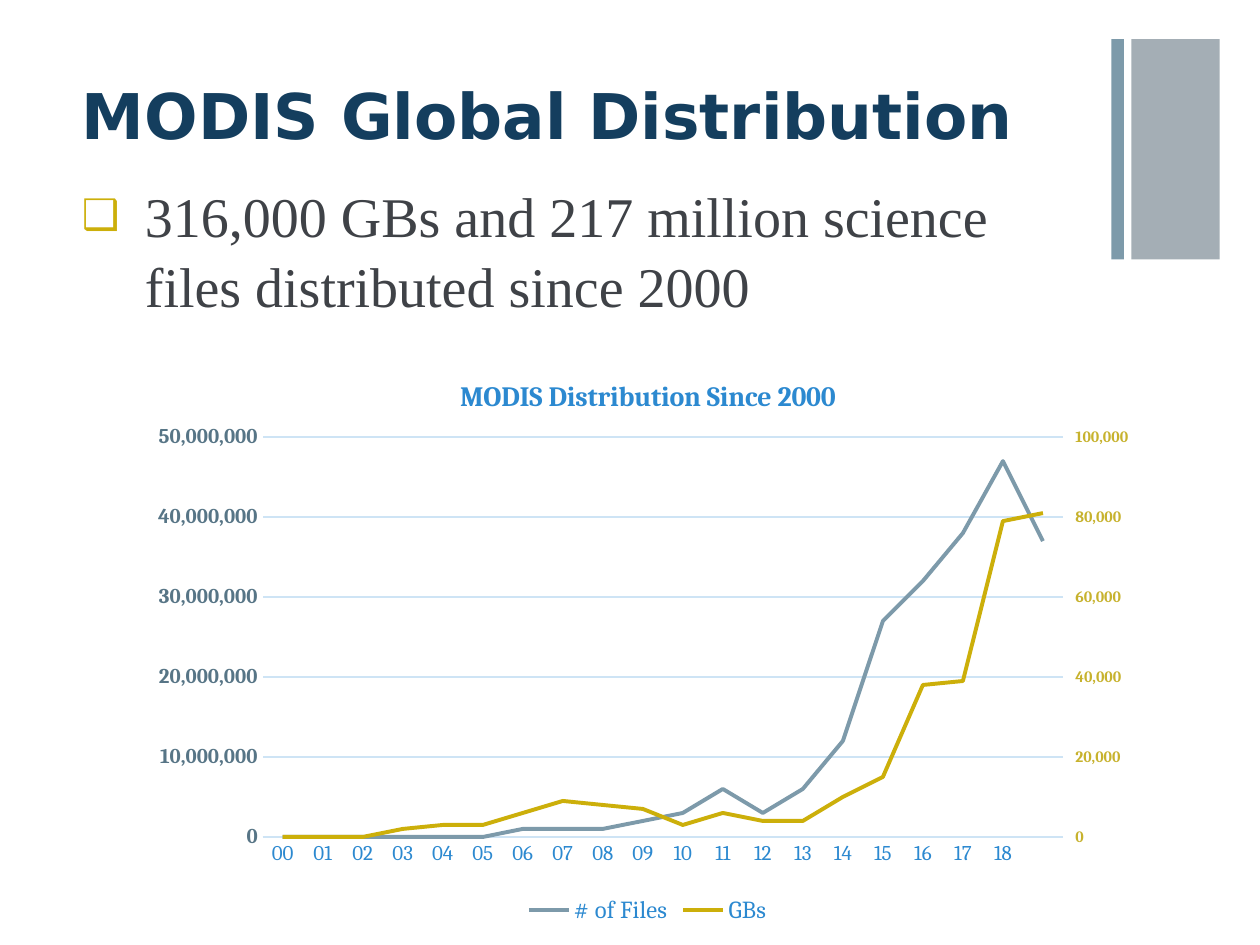
from copy import deepcopy

from lxml import etree
from pptx import Presentation
from pptx.chart.axis import ValueAxis
from pptx.chart.data import CategoryChartData
from pptx.dml.color import RGBColor
from pptx.enum import chart as charts, shapes, text
from pptx.oxml import ns
from pptx.util import Inches, Pt

STEEL, GOLD, BLUE, GRID = "7D9AAA", "CCAF0A", "2C89D0", "CEE4F5"
YEARS = [f"{year:02d}" for year in range(19)]
# The last point has no year label
FILES = [millions * 1_000_000 for millions in
         (0, 0, 0, 0, 0, 0, 1, 1, 1, 2, 3, 6, 3, 6, 12, 27, 32, 38, 47, 37)]
GIGABYTES = [thousands * 1000 for thousands in
             (0, 0, 0, 2, 3, 3, 6, 9, 8, 7, 3, 6, 4, 4, 10, 15, 38, 39, 79, 81)]


def rgb(value):
    return RGBColor.from_string(value)


def style_font(font, name, size, color, bold=False):
    font.name, font.size, font.bold = name, Pt(size), bold
    font.color.rgb = rgb(color)


def write(frame, words, **font):
    frame.text = words
    paragraph = frame.paragraphs[0]
    style_font(paragraph.runs[0].font, **font)
    return paragraph


def place(shape, box):
    shape.left, shape.top, shape.width, shape.height = map(Inches, box)


def sub(parent, tag, **attributes):
    return etree.SubElement(parent, ns.qn(tag), attributes)


def add_bars(slide, left, top, width, height):
    """Thin and wide bar, sharing one box."""
    thin, gap = 0.1, 0.06
    wide_left = left + thin + gap
    for x, w, color in ((wide_left, left + width - wide_left, "A4AEB5"),
                        (left, thin, STEEL)):
        bar = slide.shapes.add_shape(shapes.MSO_SHAPE.RECTANGLE, Inches(x),
                                     Inches(top), Inches(w), Inches(height))
        bar.shadow.inherit = False
        bar.fill.solid()
        bar.fill.fore_color.rgb = rgb(color)
        bar.line.fill.background()


def fill_placeholder(shape, box, words, margin_top, **font):
    place(shape, box)
    frame = shape.text_frame
    frame.word_wrap = True
    frame.auto_size = text.MSO_AUTO_SIZE.NONE
    frame.vertical_anchor = text.MSO_ANCHOR.TOP
    frame.margin_top = Inches(margin_top)
    paragraph = write(frame, words, **font)
    paragraph.alignment = text.PP_ALIGN.LEFT
    paragraph.space_before = Pt(0)
    return paragraph


def add_bullet(paragraph, mark, color, percent, indent):
    props = paragraph._p.get_or_add_pPr()
    props.set("marL", str(Inches(indent)))
    props.set("indent", str(-Inches(indent)))
    sub(sub(props, "a:buClr"), "a:srgbClr", val=color)
    sub(props, "a:buSzPct", val=str(percent * 1000))
    sub(props, "a:buFont", typeface="DejaVu Sans")
    sub(props, "a:buChar", char=mark)


def set_layout(parent, **settings):
    """Fix the position of a chart part, in fractions of the chart."""
    layout = parent.find(ns.qn("c:layout"))
    if layout is None:
        layout = etree.Element(ns.qn("c:layout"))
        before = parent.find(ns.qn("c:tx"))
        parent.insert(0 if before is None else parent.index(before) + 1, layout)
    for child in list(layout):
        layout.remove(child)
    manual = sub(layout, "c:manualLayout")
    for key, value in settings.items():
        sub(manual, f"c:{key}", val=str(value))


def format_value_axis(axis, top, unit, size, color, tick):
    axis.minimum_scale, axis.maximum_scale, axis.major_unit = 0, top, unit
    axis.major_tick_mark = tick
    axis.tick_labels.number_format = "#,##0"
    axis.tick_labels.number_format_is_linked = False
    style_font(axis.tick_labels.font, "Cambria", size, color, True)
    axis.format.line.fill.background()


def add_right_axis(chart):
    """Move the second series to its own plot with a right-hand axis."""
    plot_area = chart._chartSpace.chart.plotArea
    line, cat, val = (plot_area.find(ns.qn(f"c:{tag}"))
                      for tag in ("lineChart", "catAx", "valAx"))
    ids = {ax.find(ns.qn("c:axId")).get("val"): new
           for ax, new in ((cat, "50010"), (val, "50020"))}
    line2, cat2, val2 = (deepcopy(part) for part in (line, cat, val))
    for part in (line2, cat2, val2):
        for ref in part.iter(ns.qn("c:axId"), ns.qn("c:crossAx")):
            ref.set("val", ids[ref.get("val")])
    line.remove(line.findall(ns.qn("c:ser"))[1])
    line2.remove(line2.findall(ns.qn("c:ser"))[0])
    line.addnext(line2)
    val.addnext(val2)
    val2.addnext(cat2)
    cat2.find(ns.qn("c:delete")).set("val", "1")
    val2.find(ns.qn("c:axPos")).set("val", "r")
    val2.find(ns.qn("c:crosses")).set("val", "max")
    right = ValueAxis(val2)
    right.has_major_gridlines = False
    return right


def add_distribution_chart(slide, box):
    data = CategoryChartData(number_format="#,##0")
    data.categories = YEARS
    data.add_series("# of Files", FILES)
    data.add_series("GBs", GIGABYTES)
    chart = slide.shapes.add_chart(charts.XL_CHART_TYPE.LINE,
                                   *map(Inches, box), data).chart
    style_font(chart.font, "Cambria", 10, "143E5E")

    # Title and legend
    chart.has_title = True
    write(chart.chart_title.text_frame, "MODIS Distribution Since 2000",
          name="Cambria", size=16, color=BLUE, bold=True)
    set_layout(chart.chart_title._element, xMode="edge", yMode="edge",
               x=0.31, y=0.04)
    chart.has_legend = True
    chart.legend.position = charts.XL_LEGEND_POSITION.BOTTOM
    chart.legend.include_in_layout = False
    style_font(chart.legend.font, "Cambria", 14, BLUE)

    # Lines
    chart.plots[0].vary_by_categories = False
    for series, color in zip(chart.plots[0].series, (STEEL, GOLD)):
        series.smooth = False
        series.marker.style = charts.XL_MARKER_STYLE.NONE
        series.format.line.color.rgb = rgb(color)
        series.format.line.width = Pt(2.25)

    # Axes
    years, files = chart.category_axis, chart.value_axis
    years.major_tick_mark = charts.XL_TICK_MARK.NONE
    style_font(years.tick_labels.font, "Cambria", 12, BLUE)
    files.has_major_gridlines = True
    for line in (years.format.line, files.major_gridlines.format.line):
        line.color.rgb = rgb(GRID)
        line.width = Pt(0.75)
    format_value_axis(files, 50_000_000, 10_000_000, 12, "577586",
                      charts.XL_TICK_MARK.NONE)
    format_value_axis(add_right_axis(chart), 100_000, 20_000, 9, "C7B22D",
                      charts.XL_TICK_MARK.OUTSIDE)
    set_layout(chart._chartSpace.chart.plotArea, layoutTarget="inner",
               xMode="edge", yMode="edge", x=0.12, y=0.15, w=0.79, h=0.69)


def main():
    deck = Presentation()
    deck.slide_width, deck.slide_height = Inches(10), Inches(7.5)
    slide = deck.slides.add_slide(deck.slide_layouts[1])
    add_bars(slide, 8.82, 0.31, 0.86, 1.75)
    fill_placeholder(slide.shapes.title, (0.55, 0.53, 8.26, 1.02),
                     "MODIS Global Distribution", 0.08,
                     name="DejaVu Sans", size=36, color="143E5E", bold=True)
    summary = fill_placeholder(
        slide.placeholders[1], (0.55, 1.35, 8.26, 5.35),
        "316,000 GBs and 217 million science files distributed since 2000",
        0.07, name="Times New Roman", size=32, color="3F4247")
    summary.line_spacing = 1.04
    add_bullet(summary, "❑", GOLD, 75, 0.5)
    add_distribution_chart(slide, (1.12, 2.78, 8.04, 4.6))
    deck.save("out.pptx")


if __name__ == "__main__":
    main()
